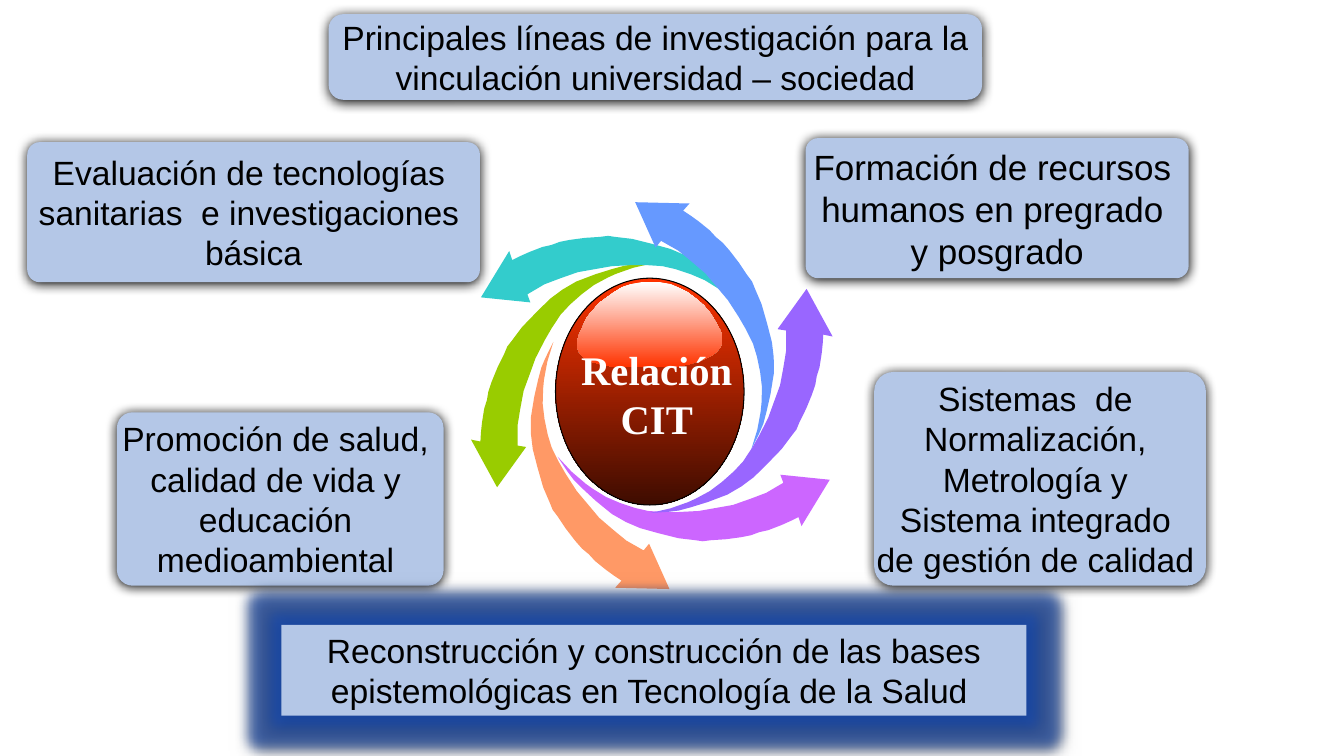
from typing import NamedTuple

from lxml import etree
from pptx import Presentation
from pptx import util as u
from pptx.dml.color import RGBColor
from pptx.enum import shapes, text
from pptx.oxml import ns

BLACK = RGBColor(0x00, 0x00, 0x00)
WHITE = RGBColor(0xFF, 0xFF, 0xFF)
SKY = RGBColor(0xB4, 0xC7, 0xE7)
GLOW = RGBColor(0x1C, 0x50, 0xB8)
RED = RGBColor(0xFF, 0x33, 0x00)
BROWN = RGBColor(0x3E, 0x0C, 0x00)
PINK = RGBColor(0xCC, 0x66, 0xFF)
PEACH = RGBColor(0xFF, 0x99, 0x66)
LIME = RGBColor(0x99, 0xCC, 0x00)
TEAL = RGBColor(0x33, 0xCC, 0xCC)
BLUE = RGBColor(0x66, 0x99, 0xFF)
VIOLET = RGBColor(0x99, 0x66, 0xFF)

ROUND = shapes.MSO_SHAPE.ROUNDED_RECTANGLE
RECT = shapes.MSO_SHAPE.RECTANGLE
OVAL = shapes.MSO_SHAPE.OVAL

ARROW = [
    (224, 26), (221, 18), (270, 23), (242, 69), (239, 60), (231, 64), (222, 68),
    (209, 73), (200, 75), (192, 78), (182, 80), (167, 82), (152, 83), (144, 84),
    (137, 83), (120, 81), (100, 76), (82, 71), (68, 65), (54, 57), (38, 44),
    (25, 32), (16, 23), (10, 15), (0, 0), (14, 15), (21, 21), (28, 27), (35, 32),
    (48, 40), (62, 46), (77, 51), (90, 54), (106, 55), (120, 55), (140, 54),
    (157, 51), (174, 48), (191, 42), (207, 36),
]
GLOSS = [
    (142, 47), (144, 52), (144, 61), (142, 65), (139, 69), (135, 72), (125, 77),
    (113, 81), (98, 84), (87, 84), (52, 84), (38, 84), (26, 82), (15, 79),
    (7, 75), (2, 69), (0, 62), (2, 53), (6, 44), (10, 35), (16, 28), (22, 21),
    (30, 15), (37, 10), (45, 5), (54, 2), (64, 0), (73, 0), (83, 0), (93, 2),
    (102, 6), (110, 10), (118, 16), (126, 23), (132, 30), (137, 38),
]


class Swirl(NamedTuple):
    left: float
    top: float
    hue: RGBColor


class Card(NamedTuple):
    left: float
    top: float
    width: float
    height: float
    lines: list[str]
    size: int = 24
    wrap: bool = False
    form: int = ROUND
    curve: float = 0.09


SWIRLS = [
    Swirl(5.53, 4.53, PINK),
    Swirl(4.45, 4.35, PEACH),
    Swirl(4.09, 3.15, LIME),
    Swirl(4.77, 2.34, TEAL),
    Swirl(5.79, 2.66, BLUE),
    Swirl(6.14, 3.71, VIOLET),
]
CARDS = [
    Card(3.26, 0.14, 6.48, 0.85, [
        "Principales líneas de investigación para la "
        "vinculación universidad – sociedad"], wrap=True, curve=0.17),
    Card(7.99, 1.37, 3.8, 1.39, [
        "Formación de recursos ", "humanos en pregrado ", "y posgrado"], size=25),
    Card(1.16, 4.09, 3.24, 1.72, [
        "Promoción de salud, ", "calidad de vida y ", "educación ",
        "medioambiental "]),
    Card(2.79, 6.2, 7.39, 0.9, [
        "Reconstrucción y construcción de las bases "
        "epistemológicas en Tecnología de la Salud "], wrap=True, form=RECT),
    Card(8.67, 3.69, 3.29, 2.12, [
        "Sistemas  de ", "Normalización, ", "Metrología y ",
        "Sistema integrado ", "de gestión de calidad "]),
    Card(0.27, 1.41, 4.49, 1.39, [
        "Evaluación de tecnologías ", "sanitarias  e investigaciones ", "básica"]),
]


def write(shape, lines: list[str], *, size: int = 24, face: str = "Arial",
          hue: RGBColor = BLACK, bold: bool = False, wrap: bool = True) -> None:
    frame = shape.text_frame
    frame.word_wrap = wrap
    frame.margin_left = frame.margin_right = u.Inches(0.08)
    frame.vertical_anchor = text.MSO_ANCHOR.MIDDLE
    for i, line in enumerate(lines):
        para = frame.add_paragraph() if i else frame.paragraphs[0]
        para.alignment = text.PP_ALIGN.CENTER
        run = para.add_run()
        run.text = line
        font = run.font
        font.size, font.name, font.bold = u.Pt(size), face, bold
        font.color.rgb = hue


def paint(shape, hue: RGBColor) -> None:
    shape.shadow.inherit = False
    shape.fill.solid()
    shape.fill.fore_color.rgb = hue
    shape.line.fill.background()


def blend(shape, first: RGBColor, last: RGBColor) -> None:
    shape.shadow.inherit = False
    shape.fill.gradient()
    shape.fill.gradient_angle = 270
    for stop, hue, place in zip(shape.fill.gradient_stops, (first, last), (0, 1)):
        stop.color.rgb = hue
        stop.position = place


def effect(shape, tag: str, hue: RGBColor, alpha: int = 100, **marks: int) -> None:
    group = shape.element.spPr.find(ns.qn("a:effectLst"))
    node = etree.SubElement(group, ns.qn(tag))
    for key, value in marks.items():
        node.set(key, str(value))
    tint = etree.SubElement(node, ns.qn("a:srgbClr"))
    tint.set("val", str(hue))
    etree.SubElement(tint, ns.qn("a:alpha")).set("val", str(alpha * 1000))


def trace(slide, points: list[tuple[int, int]], left: float, top: float):
    pen = slide.shapes.build_freeform(*points[0], scale=u.Inches(0.01))
    pen.add_line_segments(points[1:], close=True)
    return pen.convert_to_shape(u.Inches(left), u.Inches(top))


def place(slide, form: int, *box: float):
    return slide.shapes.add_shape(form, *map(u.Inches, box))


def add_card(slide, card: Card) -> None:
    shape = place(slide, card.form, card.left, card.top, card.width, card.height)
    paint(shape, SKY)
    if card.form == ROUND:
        shape.adjustments[0] = card.curve
    else:
        effect(shape, "a:glow", GLOW, alpha=60, rad=u.Inches(0.22))
    effect(shape, "a:outerShdw", BLACK, blurRad=u.Pt(8.5), dist=u.Pt(1),
           dir=5400000, algn="ctr", rotWithShape=0)
    write(shape, card.lines, size=card.size, wrap=card.wrap)


def add_core(slide) -> None:
    ball = place(slide, OVAL, 5.51, 2.76, 1.87, 2.25)
    blend(ball, RED, BROWN)
    ball.line.color.rgb = BLACK
    ball.line.width = u.Pt(0.75)
    gloss = trace(slide, GLOSS, 5.72, 2.8)
    blend(gloss, WHITE, RED)
    gloss.line.fill.background()
    label = slide.shapes.add_textbox(*map(u.Inches, (5.65, 3.5, 1.73, 0.81)))
    write(label, ["Relación ", "CIT"], size=29, face="Times New Roman",
          hue=WHITE, bold=True)


def main() -> None:
    deck = Presentation()
    deck.slide_width, deck.slide_height = u.Inches(13.33), u.Inches(7.5)
    slide = deck.slides.add_slide(deck.slide_layouts[6])
    for i, swirl in enumerate(SWIRLS):
        shape = trace(slide, ARROW, swirl.left, swirl.top)
        shape.rotation = 60 * i
        paint(shape, swirl.hue)
    add_core(slide)
    for card in CARDS:
        add_card(slide, card)
    deck.save("out.pptx")


if __name__ == "__main__":
    main()
